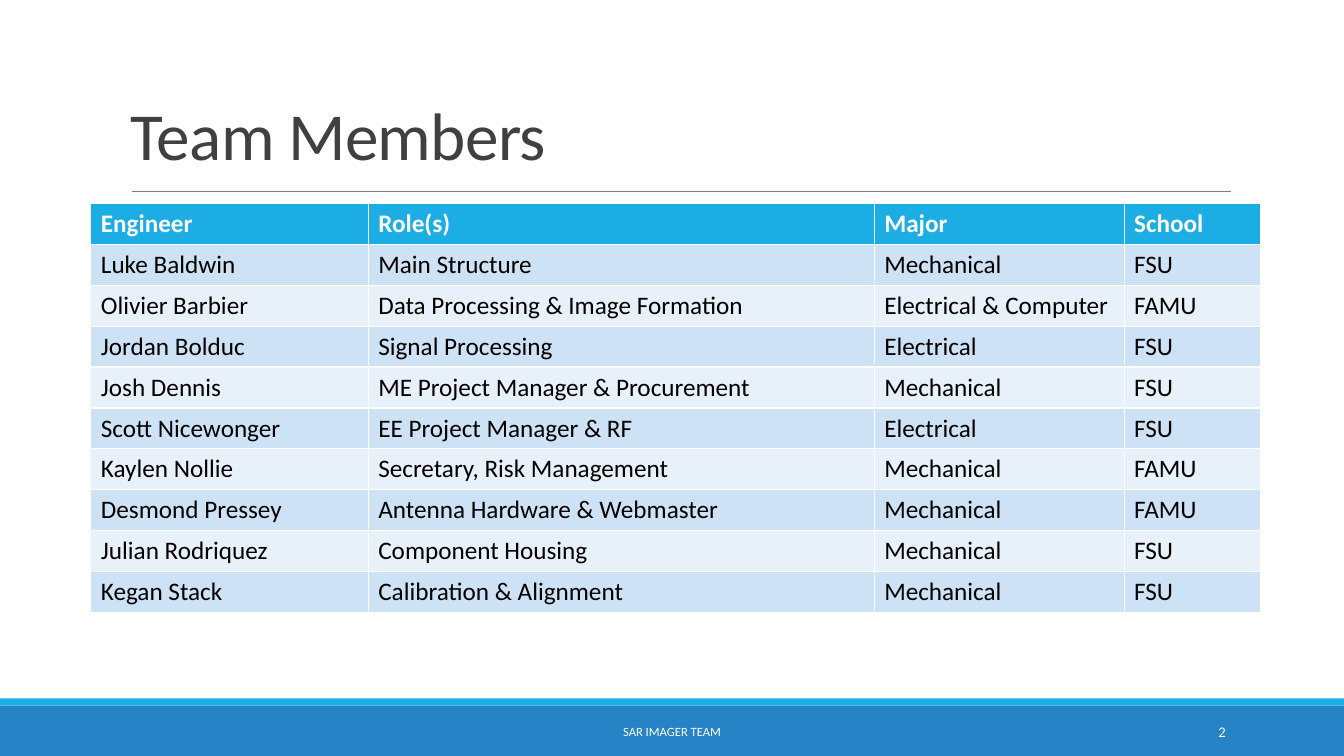
from pptx import Presentation
from pptx.dml.color import RGBColor
from pptx.enum.shapes import MSO_CONNECTOR as Connector, MSO_SHAPE as Shape
from pptx.enum.text import MSO_ANCHOR as Anchor, PP_ALIGN as Align
from pptx.oxml.ns import qn
from pptx.util import Cm, Pt
from lxml.etree import SubElement

SLIDE_WIDTH, SLIDE_HEIGHT = 33.87, 19.05
FONT = "Calibri"
COLOURS = {
    "white": "FFFFFF", "black": "000000", "title": "404040", "rule": "808080",
    "footer": "2683C6", "accent": "1CADE4", "odd_row": "CDE3F5", "even_row": "E8F1FA",
}
COLUMN_WIDTHS = [6.99, 12.75, 6.3, 3.43]
ROW_HEIGHT = 1.03
TEAM = [
    ("Engineer", "Role(s)", "Major", "School"),
    ("Luke Baldwin", "Main Structure", "Mechanical", "FSU"),
    ("Olivier Barbier", "Data Processing & Image Formation", "Electrical & Computer", "FAMU"),
    ("Jordan Bolduc", "Signal Processing", "Electrical", "FSU"),
    ("Josh Dennis", "ME Project Manager & Procurement", "Mechanical", "FSU"),
    ("Scott Nicewonger", "EE Project Manager & RF", "Electrical", "FSU"),
    ("Kaylen Nollie", "Secretary, Risk Management", "Mechanical", "FAMU"),
    ("Desmond Pressey", "Antenna Hardware & Webmaster", "Mechanical", "FAMU"),
    ("Julian Rodriquez", "Component Housing", "Mechanical", "FSU"),
    ("Kegan Stack", "Calibration & Alignment", "Mechanical", "FSU"),
]


def colour(name):
    return RGBColor.from_string(COLOURS[name])


def style_font(paragraph, size, colour_name, bold=False):
    font = paragraph.font
    font.name, font.size, font.bold = FONT, Pt(size), bold
    font.color.rgb = colour(colour_name)


def add_band(slide, top, height, colour_name):
    band = slide.shapes.add_shape(Shape.RECTANGLE, 0, Cm(top), Cm(SLIDE_WIDTH), Cm(height))
    band.shadow.inherit = False
    band.fill.solid()
    band.fill.fore_color.rgb = colour(colour_name)
    band.line.fill.background()


def add_rule(slide, left, right, top):
    rule = slide.shapes.add_connector(Connector.STRAIGHT, Cm(left), Cm(top), Cm(right), Cm(top))
    rule.line.color.rgb = colour("rule")
    rule.line.width = Pt(0.5)
    SubElement(rule._element.spPr, qn("a:effectLst"))


def add_text(slide, text, box, size, colour_name, align=Align.LEFT, anchor=Anchor.MIDDLE):
    frame = slide.shapes.add_textbox(*map(Cm, box)).text_frame
    frame.word_wrap = True
    frame.vertical_anchor = anchor
    paragraph = frame.paragraphs[0]
    paragraph.text = text
    paragraph.alignment = align
    style_font(paragraph, size, colour_name)
    return paragraph


def add_title(slide, text):
    paragraph = add_text(slide, text, (3.05, 0.48, 27.94, 4.04), 48, "title", anchor=Anchor.BOTTOM)
    paragraph.line_spacing = 0.85
    # Tighten the letters by half a point
    paragraph.runs[0].font._element.set("spc", "-50")


def add_team_table(slide, left, top):
    # The default table style supplies the white cell borders
    table = slide.shapes.add_table(
        len(TEAM), len(COLUMN_WIDTHS), Cm(left), Cm(top),
        Cm(sum(COLUMN_WIDTHS)), Cm(ROW_HEIGHT * len(TEAM))).table
    for column, width in zip(table.columns, COLUMN_WIDTHS):
        column.width = Cm(width)
    for index, (row, member) in enumerate(zip(table.rows, TEAM)):
        row.height = Cm(ROW_HEIGHT)
        header = index == 0
        fill = "accent" if header else "odd_row" if index % 2 else "even_row"
        for cell, text in zip(row.cells, member):
            cell.text = text
            cell.fill.solid()
            cell.fill.fore_color.rgb = colour(fill)
            style_font(cell.text_frame.paragraphs[0], 18, "white" if header else "black", header)


def main():
    presentation = Presentation()
    presentation.slide_width = Cm(SLIDE_WIDTH)
    presentation.slide_height = Cm(SLIDE_HEIGHT)
    slide = presentation.slides.add_slide(presentation.slide_layouts[6])

    # Footer bands
    add_band(slide, 17.78, 1.27, "footer")
    add_band(slide, 17.6, 0.18, "accent")

    # Heading and table
    add_rule(slide, 3.33, 31.01, 4.83)
    add_title(slide, "Team Members")
    add_team_table(slide, 2.29, 5.13)

    # Footer text
    add_text(slide, "SAR IMAGER TEAM", (10.24, 17.93, 13.39, 1.02), 9, "white", Align.CENTER)
    add_text(slide, "2", (27.51, 17.93, 3.63, 1.02), 10.5, "white", Align.RIGHT)

    presentation.save("out.pptx")


if __name__ == "__main__":
    main()
